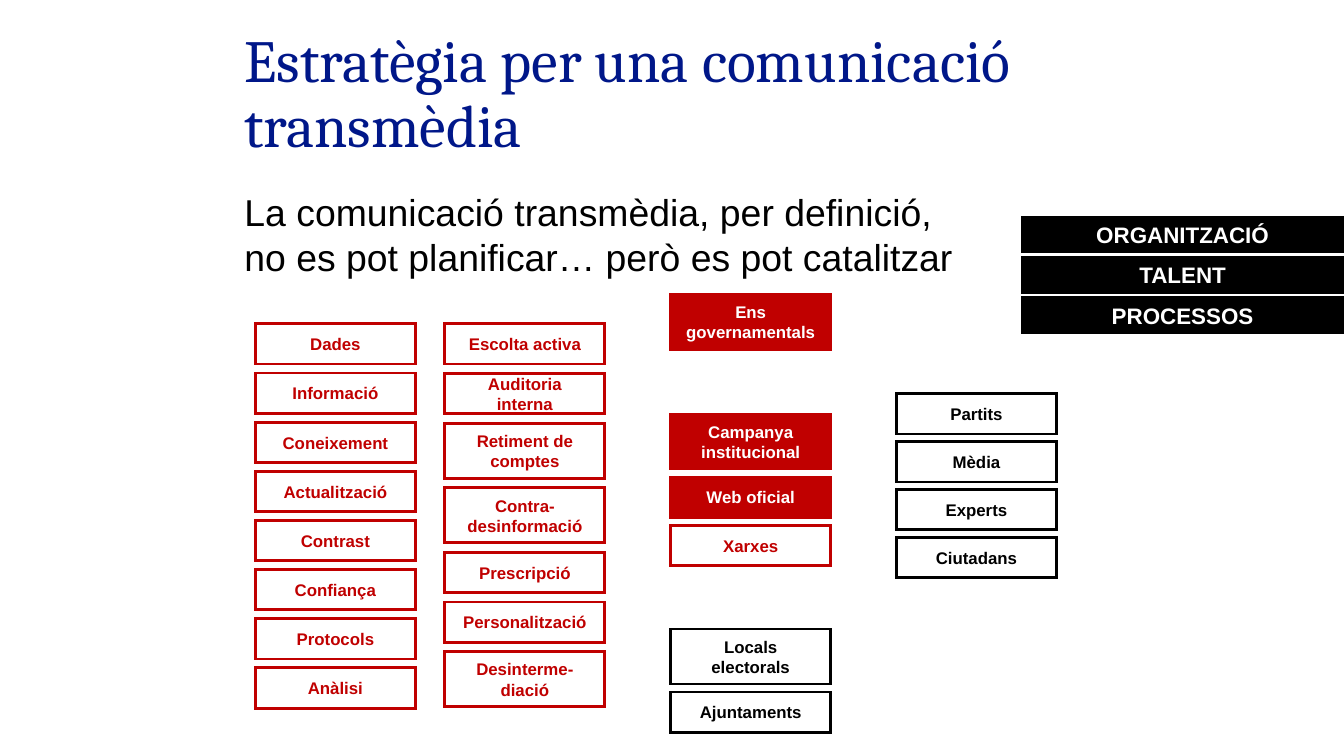
import lxml.etree
import pptx
import pptx.util
import pptx.dml.color
import pptx.enum.shapes
import pptx.enum.text
import pptx.oxml.ns

WIDTH = 10
HEIGHT = WIDTH * 9 / 16
RED, BLACK, WHITE, NAVY = "C00000", "000000", "FFFFFF", "001789"
LOW, TALL, BAR = 0.3, 0.41, 0.27
BOX_WIDTH, BAR_WIDTH = 1.19, 2.4
COLUMNS = [1.9, 3.31, 4.99, 6.67]
BAR_LEFT = WIDTH - BAR_WIDTH

TITLE = "Estratègia per una comunicació transmèdia"
BODY = "La comunicació transmèdia, per definició, no es pot planificar… però es pot catalitzar"

RED_OUTLINE = (None, RED, 1.5, RED)
RED_SOLID = (RED, RED, 1.5, WHITE)
BLACK_OUTLINE = (None, BLACK, 1.5, BLACK)
BLACK_SOLID = (BLACK, BLACK, 0, WHITE)

STACKS = [
    (COLUMNS[3], 2.93, 4.3, BOX_WIDTH, 9, [
        ("Partits", LOW, BLACK_OUTLINE),
        ("Mèdia", LOW, BLACK_OUTLINE),
        ("Experts", LOW, BLACK_OUTLINE),
        ("Ciutadans", LOW, BLACK_OUTLINE),
    ]),
    (COLUMNS[2], 3.08, 4.21, BOX_WIDTH, 9, [
        ("Campanya institucional", TALL, RED_SOLID),
        ("Web oficial", LOW, RED_SOLID),
        ("Xarxes", LOW, RED_OUTLINE),
    ]),
    (COLUMNS[2], 4.68, 5.45, BOX_WIDTH, 9, [
        ("Locals electorals", TALL, BLACK_OUTLINE),
        ("Ajuntaments", LOW, BLACK_OUTLINE),
    ]),
    (COLUMNS[2], 2.19, 2.6, BOX_WIDTH, 9, [
        ("Ens governamentals", TALL, RED_SOLID),
    ]),
    (COLUMNS[0], 2.41, 5.27, BOX_WIDTH, 9, [
        ("Dades", LOW, RED_OUTLINE),
        ("Informació", LOW, RED_OUTLINE),
        ("Coneixement", LOW, RED_OUTLINE),
        ("Actualització", LOW, RED_OUTLINE),
        ("Contrast", LOW, RED_OUTLINE),
        ("Confiança", LOW, RED_OUTLINE),
        ("Protocols", LOW, RED_OUTLINE),
        ("Anàlisi", LOW, RED_OUTLINE),
    ]),
    (COLUMNS[1], 2.41, 5.26, BOX_WIDTH, 9, [
        ("Escolta activa", LOW, RED_OUTLINE),
        ("Auditoria interna", LOW, RED_OUTLINE),
        ("Retiment de comptes", TALL, RED_OUTLINE),
        ("Contra-desinformació", TALL, RED_OUTLINE),
        ("Prescripció", LOW, RED_OUTLINE),
        ("Personalització", LOW, RED_OUTLINE),
        ("Desinterme-diació", TALL, RED_OUTLINE),
    ]),
    (BAR_LEFT, 1.61, 2.48, BAR_WIDTH, 12, [
        ("ORGANITZACIÓ", BAR, BLACK_SOLID),
        ("TALENT", BAR, BLACK_SOLID),
        ("PROCESSOS", BAR, BLACK_SOLID),
    ]),
]


def color(value):
    return pptx.dml.color.RGBColor.from_string(value)


def inches(*values):
    return [pptx.util.Inches(v) for v in values]


def write(sp, text, font, size, text_color, anchor):
    tf = sp.text_frame
    tf.word_wrap = True
    tf.vertical_anchor = anchor
    p = tf.paragraphs[0]
    p.text = text
    p.font.name = font
    p.font.size = pptx.util.Pt(size)
    p.font.color.rgb = color(text_color)
    return p


def add_text(s, place, text, font, size, text_color, anchor):
    sp = s.shapes.add_textbox(*inches(*place))
    return write(sp, text, font, size, text_color, anchor)


def add_box(s, place, text, size, style):
    fill, line, line_width, text_color = style
    sp = s.shapes.add_shape(pptx.enum.shapes.MSO_SHAPE.RECTANGLE, *inches(*place))
    sp.shadow.inherit = False
    if fill:
        sp.fill.solid()
        sp.fill.fore_color.rgb = color(fill)
    else:
        sp.fill.background()
    sp.line.color.rgb = color(line)
    sp.line.width = pptx.util.Pt(line_width)
    ln = sp.element.spPr.find(pptx.oxml.ns.qn("a:ln"))
    lxml.etree.SubElement(ln, pptx.oxml.ns.qn("a:miter"), lim="800000")
    p = write(sp, text, "Arial", size, text_color, pptx.enum.text.MSO_ANCHOR.MIDDLE)
    p.alignment = pptx.enum.text.PP_ALIGN.CENTER
    p.font.bold = True


def add_stack(s, left, top, bottom, width, size, boxes):
    free = bottom - top - sum(height for _, height, _ in boxes)
    gap = free / max(len(boxes) - 1, 1)
    for text, height, style in boxes:
        add_box(s, (left, top, width, height), text, size, style)
        top += height + gap


def main():
    prs = pptx.Presentation()
    prs.slide_width, prs.slide_height = inches(WIDTH, HEIGHT)
    s = prs.slides.add_slide(prs.slide_layouts[6])
    p = add_text(s, (1.72, 0.28, 7.98, 0.96), TITLE, "Cambria", 32, NAVY,
                 pptx.enum.text.MSO_ANCHOR.BOTTOM)
    p.line_spacing = 0.9
    add_text(s, (1.72, 1.36, 5.62, 3.86), BODY, "Arial", 20, BLACK,
             pptx.enum.text.MSO_ANCHOR.TOP)
    for stack in STACKS:
        add_stack(s, *stack)
    prs.save("out.pptx")


if __name__ == "__main__":
    main()
